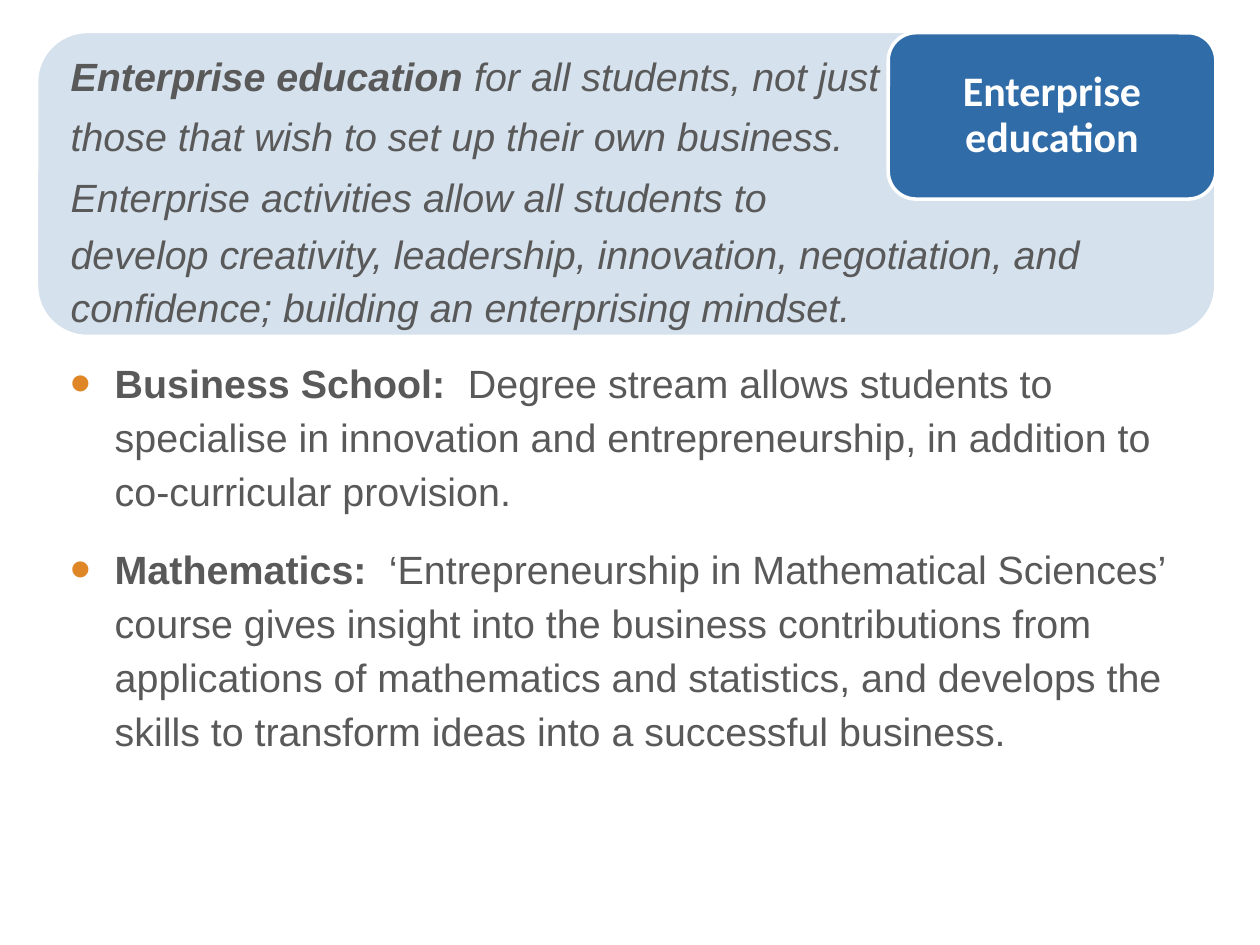
from dataclasses import dataclass

from lxml import etree
from pptx import Presentation
from pptx.dml.color import RGBColor
from pptx.enum.shapes import MSO_SHAPE
from pptx.enum.text import MSO_ANCHOR, MSO_AUTO_SIZE, PP_ALIGN
from pptx.oxml.ns import qn
from pptx.util import Inches, Pt

ROUNDED = MSO_SHAPE.ROUNDED_RECTANGLE
TOP, MIDDLE = MSO_ANCHOR.TOP, MSO_ANCHOR.MIDDLE
LEFT, CENTER = PP_ALIGN.LEFT, PP_ALIGN.CENTER
NO_AUTOFIT = MSO_AUTO_SIZE.NONE

BLUE, WHITE, GREY, ORANGE = "306CA7", "FFFFFF", "595959", "DF8626"
BODY_FONT = {"name": "Arial", "size": Pt(22.5)}
BADGE_FONT = {"name": "Calibri", "size": Pt(24)}


@dataclass
class Box:
    left: float
    top: float
    width: float
    height: float

    def lengths(self) -> list:
        return [Inches(v) for v in (self.left, self.top, self.width, self.height)]


@dataclass
class Passage:
    lead: str
    text: str


BANNER = Box(0.29, 0.25, 9.36, 2.42)
BADGE = Box(7.05, 0.26, 2.6, 1.32)
INTRO = Box(0.29, 0.24, 6.82, 1.32)
INTRO_END = Box(0.29, 1.7, 9.31, 1.32)
BODY = Box(0.29, 2.73, 9.44, 3.78)

INTRO_PASSAGE = Passage(
    "Enterprise education",
    " for all students, not just those that wish to set up their own business.  "
    "Enterprise activities allow all students to",
)
INTRO_END_PASSAGE = Passage(
    "",
    "develop creativity, leadership, innovation, negotiation, and confidence; "
    "building an enterprising mindset.",
)
BULLETS = [
    Passage(
        "Business School:  ",
        "Degree stream allows students to specialise in innovation and "
        "entrepreneurship, in addition to co-curricular provision.",
    ),
    Passage(
        "Mathematics:  ",
        "‘Entrepreneurship in Mathematical Sciences’ course gives insight into the "
        "business contributions from applications of mathematics and statistics, and "
        "develops the skills to transform ideas into a successful business.",
    ),
]


def color(value: str) -> RGBColor:
    return RGBColor.from_string(value)


def apply(target, formats: dict) -> None:
    for name, value in formats.items():
        setattr(target, name, value)


def prepare_frame(frame, anchor=TOP) -> None:
    margins = {f"margin_{side}": Inches(0.07) for side in ("left", "top", "right", "bottom")}
    apply(frame, {"word_wrap": True, "auto_size": NO_AUTOFIT, "vertical_anchor": anchor, **margins})


def add_run(paragraph, text: str, font: dict, font_color: str) -> None:
    run = paragraph.add_run()
    run.text = text
    apply(run.font, font)
    run.font.color.rgb = color(font_color)


def write_passage(paragraph, passage: Passage, line_spacing, indent: float,
                  hanging: float = 0, italic: bool = False) -> None:
    apply(paragraph, {"alignment": LEFT, "line_spacing": line_spacing, "space_before": Pt(14)})
    properties = paragraph._p.get_or_add_pPr()
    properties.set("marL", str(Inches(indent)))
    properties.set("indent", str(Inches(-hanging)))
    for text, bold in ((passage.lead, True), (passage.text, False)):
        if text:
            add_run(paragraph, text, {**BODY_FONT, "bold": bold, "italic": italic}, GREY)


def add_bullet(paragraph) -> None:
    properties = paragraph._p.get_or_add_pPr()
    bullet_color = etree.SubElement(properties, qn("a:buClr"))
    etree.SubElement(bullet_color, qn("a:srgbClr"), val=ORANGE)
    etree.SubElement(properties, qn("a:buSzPct"), val="150000")
    etree.SubElement(properties, qn("a:buFont"), typeface="Arial")
    etree.SubElement(properties, qn("a:buChar"), char="•")


def add_panel(slide, box: Box, opacity: int = 100):
    shape = slide.shapes.add_shape(ROUNDED, *box.lengths())
    shape.shadow.inherit = False
    shape.fill.solid()
    shape.fill.fore_color.rgb = color(BLUE)
    shape.line.color.rgb = color(WHITE)
    shape.line.width = Pt(2)
    if opacity < 100:
        fill_color = shape._element.spPr.find(qn("a:solidFill")).find(qn("a:srgbClr"))
        etree.SubElement(fill_color, qn("a:alpha"), val=str(opacity * 1000))
    return shape


def add_passage_box(slide, box: Box, passage: Passage, line_spacing) -> None:
    frame = slide.shapes.add_textbox(*box.lengths()).text_frame
    prepare_frame(frame)
    write_passage(frame.paragraphs[0], passage, line_spacing, 0.2, italic=True)


def fill_body(body) -> None:
    apply(body, dict(zip(("left", "top", "width", "height"), BODY.lengths())))
    frame = body.text_frame
    prepare_frame(frame)
    for index, passage in enumerate(BULLETS):
        paragraph = frame.add_paragraph() if index else frame.paragraphs[0]
        write_passage(paragraph, passage, 1.14, 0.55, hanging=0.35)
        add_bullet(paragraph)


def add_badge(slide) -> None:
    frame = add_panel(slide, BADGE).text_frame
    prepare_frame(frame, MIDDLE)
    paragraph = frame.paragraphs[0]
    apply(paragraph, {"alignment": CENTER, "line_spacing": 0.9})
    add_run(paragraph, "Enterprise education", {**BADGE_FONT, "bold": True}, WHITE)


def main() -> None:
    presentation = Presentation()
    presentation.slide_width, presentation.slide_height = Inches(10), Inches(7.5)
    slide = presentation.slides.add_slide(presentation.slide_layouts[1])
    title = slide.shapes.title._element
    title.getparent().remove(title)

    fill_body(slide.placeholders[1])
    add_panel(slide, BANNER, opacity=20)
    add_passage_box(slide, INTRO, INTRO_PASSAGE, Pt(34.5))
    add_badge(slide)
    add_passage_box(slide, INTRO_END, INTRO_END_PASSAGE, 1.14)
    presentation.save("out.pptx")


if __name__ == "__main__":
    main()
